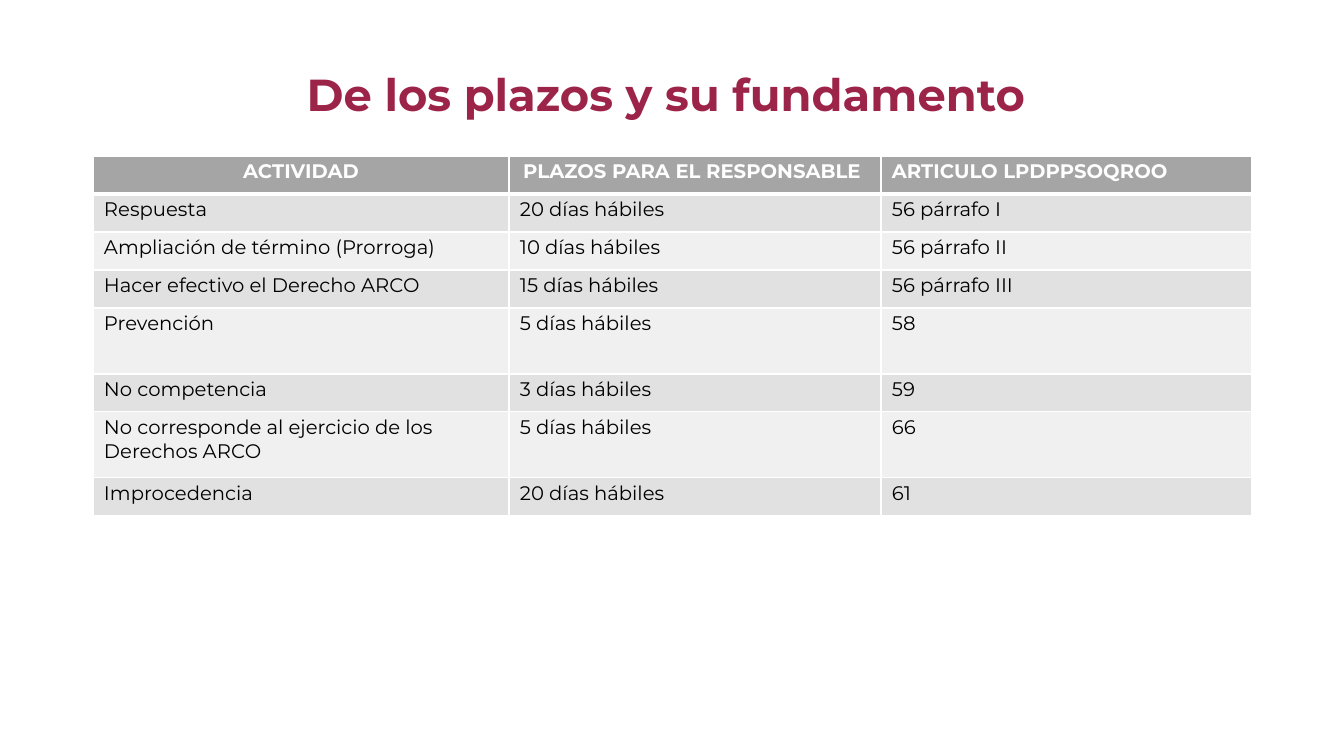
import lxml.etree
import pptx
import pptx.dml.color
import pptx.enum.text
import pptx.oxml.ns
import pptx.util

EMU_PER_PX = 914400 / 100.8
FONT = "Montserrat"
RGBColor = pptx.dml.color.RGBColor
BURGUNDY = RGBColor(0x9D, 0x24, 0x49)
HEADER_GRAY = RGBColor(0xA5, 0xA5, 0xA5)
DARK_BAND = RGBColor(0xE1, 0xE1, 0xE1)
LIGHT_BAND = RGBColor(0xF0, 0xF0, 0xF0)
WHITE = RGBColor(0xFF, 0xFF, 0xFF)
BLACK = RGBColor(0, 0, 0)
LEFT = pptx.enum.text.PP_ALIGN.LEFT
CENTER = pptx.enum.text.PP_ALIGN.CENTER

HEADERS = ["ACTIVIDAD", "PLAZOS PARA EL RESPONSABLE ", "ARTICULO LPDPPSOQROO"]
DEADLINES = [
    ["Respuesta", "20 días hábiles", "56 párrafo I"],
    ["Ampliación de término (Prorroga)", "10 días hábiles", "56 párrafo II"],
    ["Hacer efectivo el Derecho ARCO", "15 días hábiles", "56 párrafo III"],
    ["Prevención", "5 días hábiles", "58"],
    ["No competencia", "3 días hábiles", "59"],
    ["No corresponde al ejercicio de los Derechos ARCO", "5 días hábiles", "66"],
    ["Improcedencia", "20 días hábiles", "61"],
]
COLUMN_WIDTHS = [416, 372, 371]
ROW_HEIGHT, TALL_ROW_HEIGHT = 38, 66
TALL_ROWS = {4, 6}


def px(length):
    return pptx.util.Emu(round(length * EMU_PER_PX))


class SlideBuilder:
    """Holds the font and the slide being filled."""

    def __init__(self, slide, font):
        self.slide = slide
        self.font = font

    def add_text(self, frame, text, size, color, bold, align):
        paragraph = frame.paragraphs[0]
        paragraph.alignment = align
        run = paragraph.add_run()
        run.text = text
        run.font.name = self.font
        run.font.size = pptx.util.Pt(size)
        run.font.bold = bold
        run.font.color.rgb = color
        return paragraph

    def title(self, text, left, top, width, height):
        heading = self.slide.shapes.title
        heading.left, heading.top = px(left), px(top)
        heading.width, heading.height = px(width), px(height)
        frame = heading.text_frame
        frame.word_wrap = True
        frame.auto_size = pptx.enum.text.MSO_AUTO_SIZE.NONE
        frame.vertical_anchor = pptx.enum.text.MSO_ANCHOR.BOTTOM
        self.add_text(frame, text, 32, BURGUNDY, True, CENTER).line_spacing = 0.9

    def borders(self, cell, top, bottom):
        """Draw white cell edges; top and bottom widths are in points."""
        properties = cell._tc.get_or_add_tcPr()
        for side, width in (("L", 1), ("R", 1), ("T", top), ("B", bottom)):
            line = lxml.etree.SubElement(
                properties, pptx.oxml.ns.qn("a:ln" + side), w=str(pptx.util.Pt(width)))
            fill = lxml.etree.SubElement(line, pptx.oxml.ns.qn("a:solidFill"))
            lxml.etree.SubElement(fill, pptx.oxml.ns.qn("a:srgbClr"), val=str(WHITE))

    def table(self, rows, left, top, widths, heights):
        grid = self.slide.shapes.add_table(
            len(rows), len(widths), px(left), px(top),
            px(sum(widths)), px(sum(heights))).table
        for column, width in zip(grid.columns, widths):
            column.width = px(width)
        for r, (row, height) in enumerate(zip(rows, heights)):
            grid.rows[r].height = px(height)
            header = r == 0
            band = HEADER_GRAY if header else DARK_BAND if r % 2 else LIGHT_BAND
            for c, text in enumerate(row):
                cell = grid.cell(r, c)
                cell.margin_left = cell.margin_right = px(11)
                cell.margin_top = cell.margin_bottom = px(4)
                self.borders(cell, 3 if r == 1 else 1, 3 if header else 1)
                cell.fill.solid()
                cell.fill.fore_color.rgb = band
                self.add_text(cell.text_frame, text, 14, WHITE if header else BLACK,
                              header, CENTER if header and c < 2 else LEFT)


def main():
    deck = pptx.Presentation()
    deck.slide_width, deck.slide_height = px(1344), px(756)
    builder = SlideBuilder(deck.slides.add_slide(deck.slide_layouts[5]), FONT)
    builder.title("De los plazos y su fundamento ", 93, 40, 1159, 86)
    rows = [HEADERS] + DEADLINES
    heights = [TALL_ROW_HEIGHT if r in TALL_ROWS else ROW_HEIGHT
               for r in range(len(rows))]
    builder.table(rows, 93, 156, COLUMN_WIDTHS, heights)
    deck.save("out.pptx")


if __name__ == "__main__":
    main()
